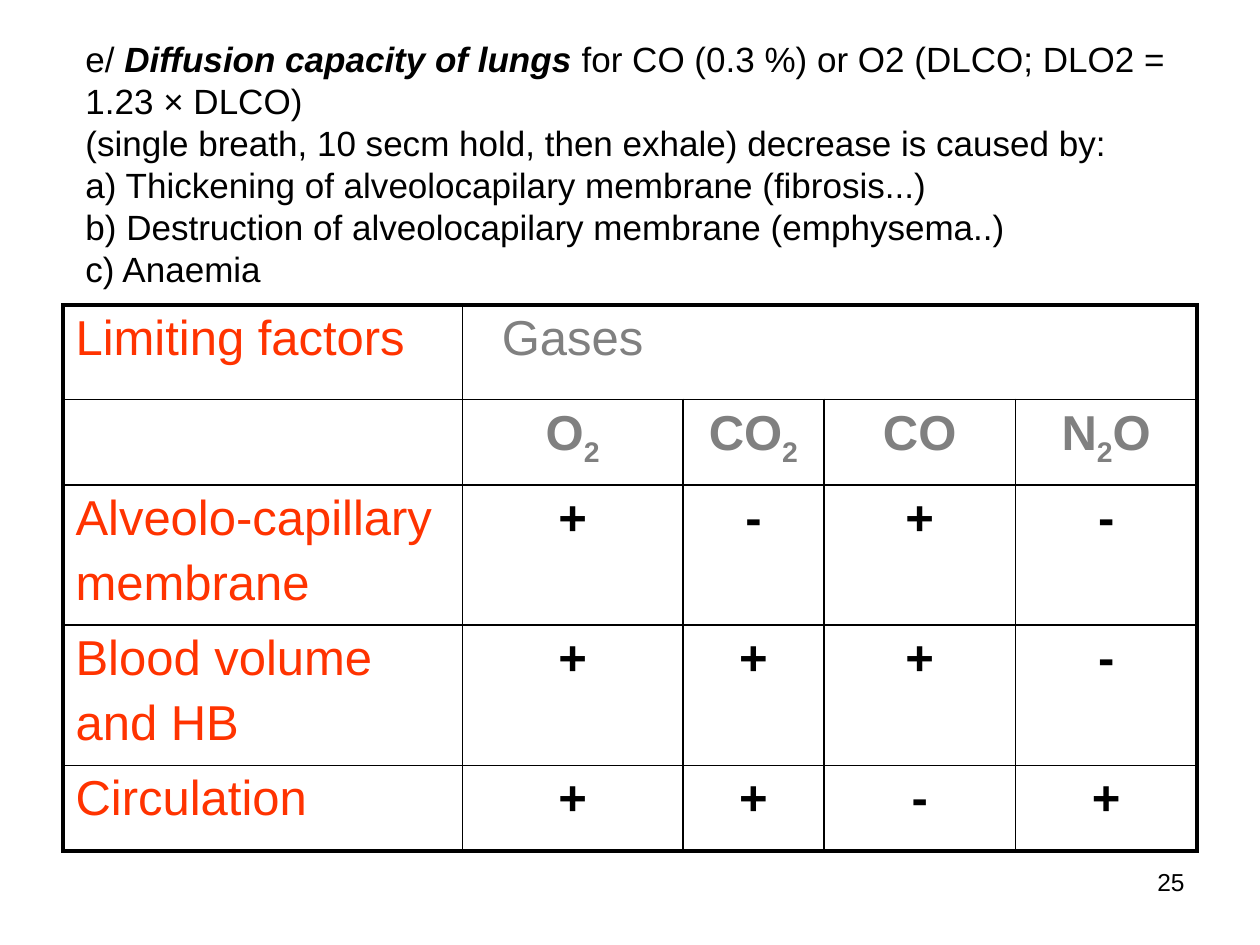
"""Build a slide on lung diffusion capacity with a table of limiting factors."""
from lxml.etree import SubElement
from pptx import Presentation
from pptx.dml.color import RGBColor
from pptx.enum.text import PP_ALIGN
from pptx.oxml.ns import qn
from pptx.util import Inches, Pt

BLACK = RGBColor(0x00, 0x00, 0x00)
ORANGE = RGBColor(0xFF, 0x33, 0x00)
GREY = RGBColor(0x80, 0x80, 0x80)
THIN, THICK = Pt(1), Pt(2.25)


def write(frame, text, size=28, color=BLACK, bold=False, align=PP_ALIGN.LEFT, before=0):
    """Write lines of text, with *bold italic* and _subscript_ marks."""
    frame.word_wrap = True
    for row, line in enumerate(text.split("\n")):
        paragraph = frame.add_paragraph() if row else frame.paragraphs[0]
        paragraph.alignment = align
        paragraph.space_before = Pt(before)
        mark = "*" if "*" in line else "_"
        for part, words in enumerate(line.split(mark)):
            if not words:
                continue
            run = paragraph.add_run()
            run.text = words
            run.font.name = "Arial"
            run.font.size = Pt(size)
            run.font.color.rgb = color
            marked = part % 2 == 1
            run.font.bold = bold or (marked and mark == "*")
            run.font.italic = marked and mark == "*"
            if marked and mark == "_":
                run.font._element.set("baseline", "-25000")


def draw_border(cell, side, width):
    """Draw one side of a cell, or hide it when the width is zero."""
    border = SubElement(cell._tc.get_or_add_tcPr(), qn(f"a:{side}"), w=str(width))
    if width:
        fill = SubElement(border, qn("a:solidFill"))
        SubElement(fill, qn("a:srgbClr"), val=str(BLACK))
    else:
        SubElement(border, qn("a:noFill"))


prs = Presentation()
prs.slide_width, prs.slide_height = Inches(10), Inches(7.5)
slide = prs.slides.add_slide(prs.slide_layouts[6])

intro = slide.shapes.add_textbox(Inches(0.58), Inches(0.25), Inches(8.9), Inches(2.12))
write(
    intro.text_frame,
    "e/ *Diffusion capacity of lungs* for CO (0.3 %) or O2 (DLCO; DLO2 = 1.23 × DLCO)\n"
    "(single breath, 10 secm hold, then exhale) decrease is caused by:\n"
    "a) Thickening of alveolocapilary membrane (fibrosis...)\n"
    "b) Destruction of alveolocapilary membrane (emphysema..)\n"
    "c) Anaemia",
    size=20,
)

column_widths = [3.17, 1.75, 1.12, 1.52, 1.44]
row_heights = [0.75, 0.68, 1.11, 1.11, 0.68]
factors = [
    ["Limiting factors", "Gases", "", "", ""],
    ["", "O_2_", "CO_2_", "CO", "N_2_O"],
    ["Alveolo-capillary\nmembrane", "+", "-", "+", "-"],
    ["Blood volume\nand HB", "+", "+", "+", "-"],
    ["Circulation", "+", "+", "-", "+"],
]
last_row, last_column = len(row_heights) - 1, len(column_widths) - 1
table = slide.shapes.add_table(
    len(row_heights), len(column_widths), Inches(0.5), Inches(2.42),
    Inches(sum(column_widths)), Inches(sum(row_heights)),
).table
table.first_row = table.horz_banding = False
for column, width in zip(table.columns, column_widths):
    column.width = Inches(width)
for row, height in zip(table.rows, row_heights):
    row.height = Inches(height)

for r, labels in enumerate(factors):
    for c, label in enumerate(labels):
        cell = table.cell(r, c)
        write(
            cell.text_frame,
            label,
            color=ORANGE if c == 0 else GREY if r < 2 else BLACK,
            bold=r > 0 and c > 0,
            align=PP_ALIGN.CENTER if c else PP_ALIGN.LEFT,
            before=5.6,
        )
        inner_left = 0 if r == 0 and c > 1 else THIN
        inner_right = 0 if r == 0 and c > 0 else THIN
        draw_border(cell, "lnL", THICK if c == 0 else inner_left)
        draw_border(cell, "lnR", THICK if c == last_column else inner_right)
        draw_border(cell, "lnT", THICK if r == 0 else THIN)
        draw_border(cell, "lnB", THICK if r == last_row else THIN)
        cell.fill.background()

page_number = slide.shapes.add_textbox(Inches(7.17), Inches(6.83), Inches(2.33), Inches(0.52))
write(page_number.text_frame, "25", size=14, align=PP_ALIGN.RIGHT)

prs.save("out.pptx")
